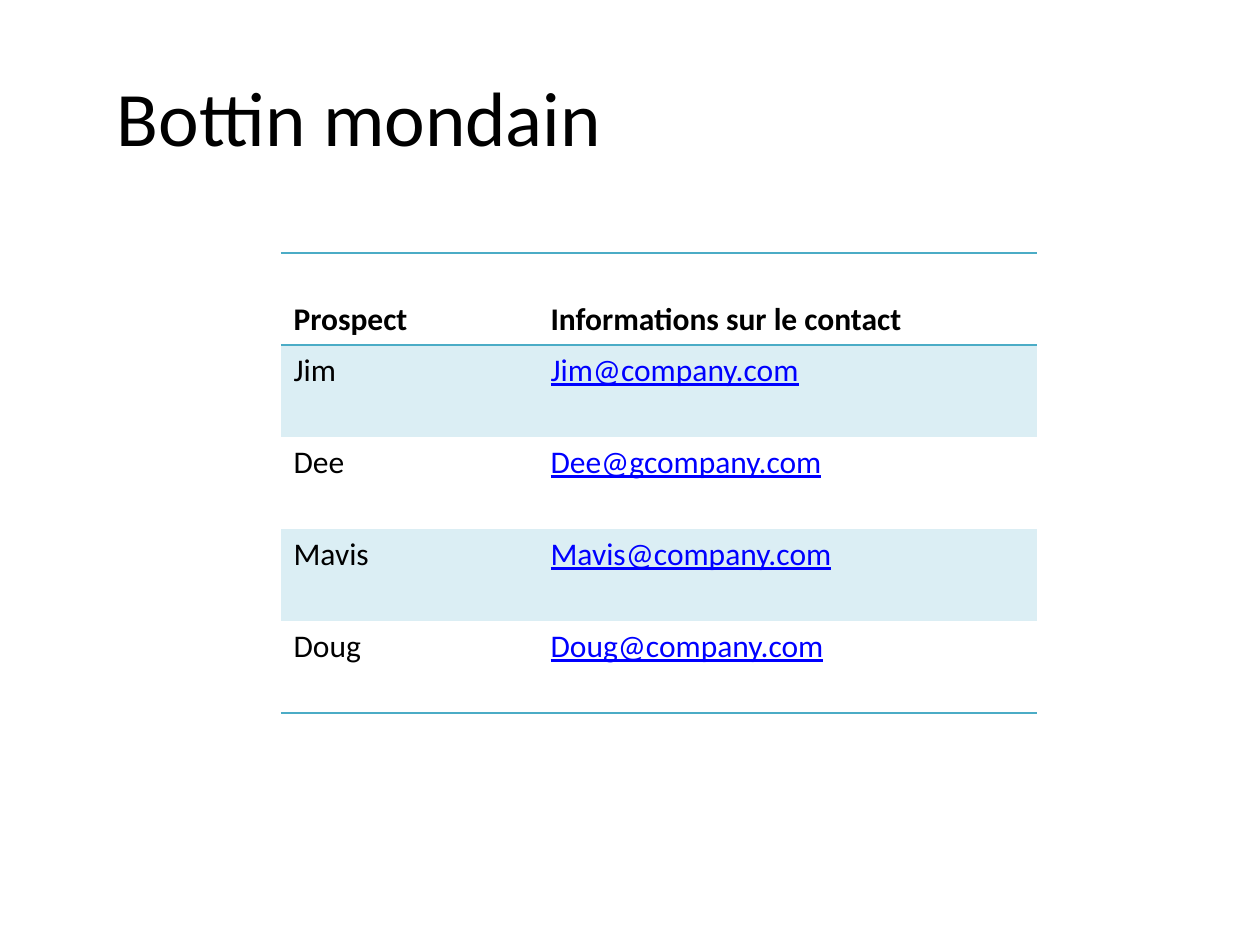
import pptx
import pptx.dml.color
import pptx.enum.text
import pptx.oxml
import pptx.oxml.ns
import pptx.util
from pptx.util import Inches

COLORS = {"text": "000000", "link": "0000FF", "band": "DBEEF4", "rule": "4BACC6"}
NO_STYLE = "{2D5ABB26-0587-4C30-8999-92F81FD0307C}"
HEADER = ("Prospect", "Informations sur le contact")
CONTACTS = [
    ("Jim", "Jim@company.com"),
    ("Dee", "Dee@gcompany.com"),
    ("Mavis", "Mavis@company.com"),
    ("Doug", "Doug@company.com"),
]


class DirectorySlide:
    """Holds the style and the current slide, and adds each kind of element."""

    font_name = "Calibri"

    def __init__(self, presentation):
        self.slide = presentation.slides.add_slide(presentation.slide_layouts[6])

    def color(self, name):
        return pptx.dml.color.RGBColor.from_string(COLORS[name])

    def set_text(self, text_frame, text, size, color="text", bold=False, underline=False):
        paragraph = text_frame.paragraphs[0]
        paragraph.text = text
        font = paragraph.font
        font.name = self.font_name
        font.size = pptx.util.Pt(size)
        font.bold = bold
        font.underline = underline
        font.color.rgb = self.color(color)

    def title(self, text, left, top, width, height):
        shape = self.slide.shapes.add_textbox(
            Inches(left), Inches(top), Inches(width), Inches(height))
        text_frame = shape.text_frame
        text_frame.word_wrap = True
        text_frame.vertical_anchor = pptx.enum.text.MSO_ANCHOR.MIDDLE
        self.set_text(text_frame, text, 44)

    def borders(self, cell, sides):
        properties = cell._tc.get_or_add_tcPr()
        for index, side in enumerate(sides):
            properties.insert(index, pptx.oxml.parse_xml(
                f'<a:ln{side} {pptx.oxml.ns.nsdecls("a")} w="12700"><a:solidFill>'
                f'<a:srgbClr val="{COLORS["rule"]}"/></a:solidFill></a:ln{side}>'))

    def table(self, rows, left, top, column_widths, row_height):
        frame = self.slide.shapes.add_table(
            len(rows), len(column_widths), Inches(left), Inches(top),
            Inches(sum(column_widths)), Inches(row_height * len(rows)))
        table = frame.table
        table.horz_banding = False
        table._tbl.tblPr.find(pptx.oxml.ns.qn("a:tableStyleId")).text = NO_STYLE
        for column, width in zip(table.columns, column_widths):
            column.width = Inches(width)
        for row_index, values in enumerate(rows):
            table.rows[row_index].height = Inches(row_height)
            header = row_index == 0
            for column_index, value in enumerate(values):
                cell = table.cell(row_index, column_index)
                link = column_index == 1 and not header
                self.set_text(cell.text_frame, value, 18, "link" if link else "text",
                              bold=header, underline=link)
                if row_index % 2:
                    cell.fill.solid()
                    cell.fill.fore_color.rgb = self.color("band")
                else:
                    cell.fill.background()
                if header:
                    cell.vertical_anchor = pptx.enum.text.MSO_ANCHOR.BOTTOM
                    self.borders(cell, "TB")
                elif row_index == len(rows) - 1:
                    self.borders(cell, "B")


def main():
    presentation = pptx.Presentation()
    presentation.slide_width = Inches(10)
    presentation.slide_height = Inches(7.5)
    directory = DirectorySlide(presentation)
    directory.title("Bottin mondain", 0.83, 0.29, 8.83, 1.25)
    directory.table([HEADER, *CONTACTS], 2.23, 2.01, (2.04, 3.96), 0.73)
    presentation.save("out.pptx")


if __name__ == "__main__":
    main()
